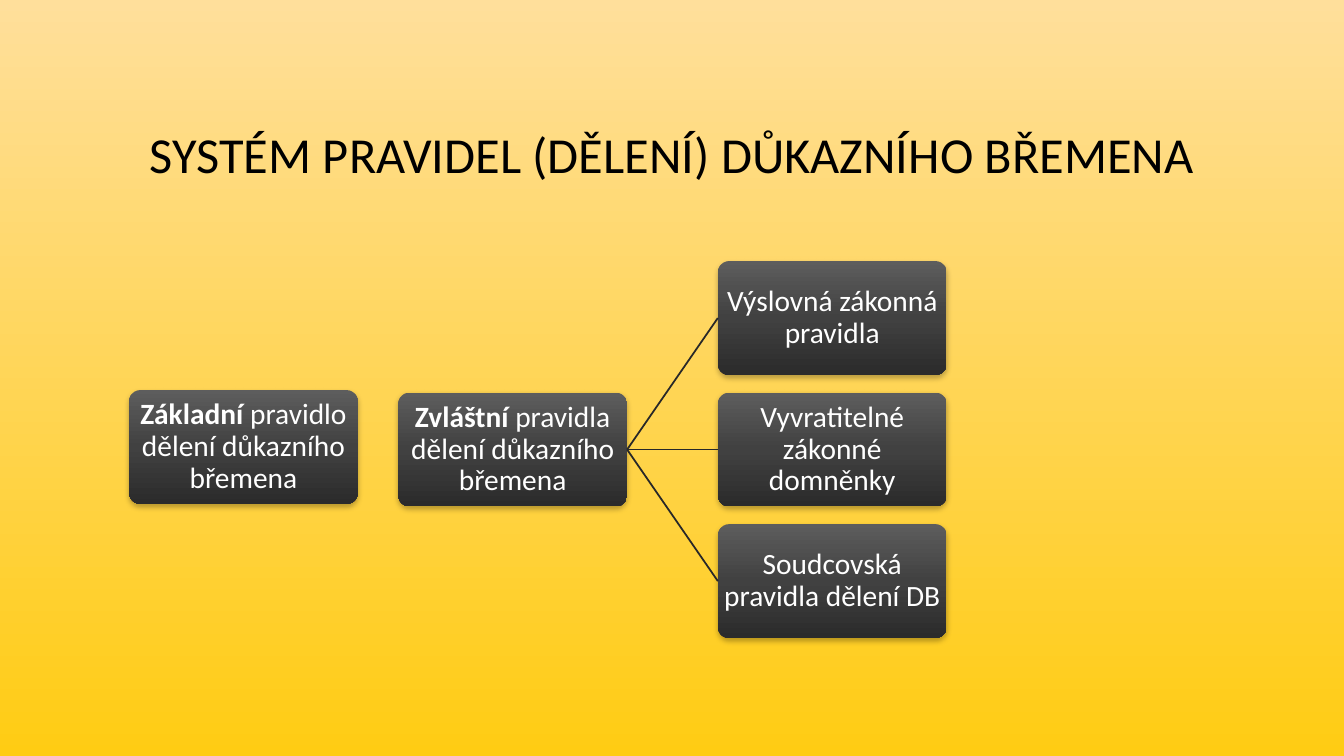
"""Build a slide that charts the rules dividing the burden of proof."""
import copy

import pptx
import pptx.dml.color
import pptx.enum.shapes
import pptx.enum.text
import pptx.oxml
import pptx.oxml.ns
import pptx.util
from pptx.util import Inches

RGB = pptx.dml.color.RGBColor
BLACK = RGB(0x00, 0x00, 0x00)
WHITE = RGB(0xFF, 0xFF, 0xFF)
LINE = RGB(0x28, 0x28, 0x28)
SKY = [RGB(0xFF, 0xDF, 0x9B), RGB(0xFF, 0xCC, 0x13)]
CHARCOAL = [RGB(0x5D, 0x5D, 0x5D), RGB(0x41, 0x41, 0x41), RGB(0x2B, 0x2B, 0x2B)]

TITLE = "SYSTÉM PRAVIDEL (DĚLENÍ) DŮKAZNÍHO BŘEMENA"
BASIC_RULE = [("Základní ", True), ("pravidlo dělení důkazního břemena", False)]
SPECIAL_RULES = [("Zvláštní", True), (" pravidla dělení důkazního břemena", False)]
BRANCHES = [
    "Výslovná zákonná pravidla",
    "Vyvratitelné zákonné domněnky",
    "Soudcovská pravidla dělení DB",
]

BOX_WIDTH, BOX_HEIGHT = 2.27, 1.13
BRANCH_LEFT, BRANCH_TOP, BRANCH_PITCH = 7.12, 2.59, 1.305
TITLE_FONT = {"name": "Calibri", "size": pptx.util.Pt(36)}
BOX_FONT = {"name": "Calibri", "size": pptx.util.Pt(21)}
MIDDLE = pptx.enum.text.MSO_ANCHOR.MIDDLE
BOX_FRAME = {"word_wrap": True, "vertical_anchor": MIDDLE}
BOX_FRAME.update({"margin_" + side: Inches(0.01) for side in ("left", "top", "right", "bottom")})
CENTRED = {"alignment": pptx.enum.text.PP_ALIGN.CENTER, "line_spacing": 0.9}
EFFECTS = f'<a:effectLst {pptx.oxml.ns.nsdecls("a")}>%s</a:effectLst>'
SHADOW = (
    '<a:outerShdw blurRad="50800" dist="25400" dir="5400000" algn="ctr" rotWithShape="0">'
    '<a:srgbClr val="000000"><a:alpha val="28000"/></a:srgbClr></a:outerShdw>'
)


def apply(target, values):
    for name, value in values.items():
        setattr(target, name, value)


def add_effects(shape, effect=""):
    shape._element.spPr.append(pptx.oxml.parse_xml(EFFECTS % effect))


def fill_gradient(fill, colours, holder):
    fill.gradient()
    fill.gradient_angle = 270
    stop_list = next(holder.iter(pptx.oxml.ns.qn("a:gsLst")))
    while len(stop_list) < len(colours):
        stop_list.append(copy.deepcopy(stop_list[-1]))
    for index, (stop, colour) in enumerate(zip(fill.gradient_stops, colours)):
        stop.position = index / (len(colours) - 1)
        stop.color.rgb = colour


def write(paragraph, spans, font, colour):
    apply(paragraph, CENTRED)
    for text, bold in spans:
        span = paragraph.add_run()
        span.text = text
        apply(span.font, {**font, "bold": bold})
        span.font.color.rgb = colour


def add_box(page, left, top, spans):
    box = page.shapes.add_shape(
        pptx.enum.shapes.MSO_SHAPE.ROUNDED_RECTANGLE,
        Inches(left), Inches(top), Inches(BOX_WIDTH), Inches(BOX_HEIGHT))
    box.adjustments[0] = 0.1
    fill_gradient(box.fill, CHARCOAL, box._element.spPr)
    box.line.fill.background()
    add_effects(box, SHADOW)
    apply(box.text_frame, BOX_FRAME)
    write(box.text_frame.paragraphs[0], spans, BOX_FONT, WHITE)
    return box


def join(page, start, end):
    line = page.shapes.add_connector(pptx.enum.shapes.MSO_CONNECTOR.STRAIGHT, 0, 0, 0, 0)
    line.begin_connect(start, 3)
    line.end_connect(end, 1)
    line.line.color.rgb = LINE
    line.line.width = pptx.util.Pt(1.25)
    add_effects(line)


def main():
    deck = pptx.Presentation()
    deck.slide_width, deck.slide_height = Inches(13.33), Inches(7.5)
    page = deck.slides.add_slide(deck.slide_layouts[5])
    fill_gradient(page.background.fill, SKY, page._element)

    title = page.shapes.title
    apply(title, {"left": Inches(1), "top": Inches(0.68),
                  "width": Inches(11.33), "height": Inches(1.75)})
    title.text_frame.vertical_anchor = MIDDLE
    write(title.text_frame.paragraphs[0], [(TITLE, False)], TITLE_FONT, BLACK)

    add_box(page, 1.28, 3.87, BASIC_RULE)
    special = add_box(page, 3.95, BRANCH_TOP + BRANCH_PITCH, SPECIAL_RULES)
    for row, text in enumerate(BRANCHES):
        branch = add_box(page, BRANCH_LEFT, BRANCH_TOP + row * BRANCH_PITCH, [(text, False)])
        join(page, special, branch)
    deck.save("out.pptx")


if __name__ == "__main__":
    main()
